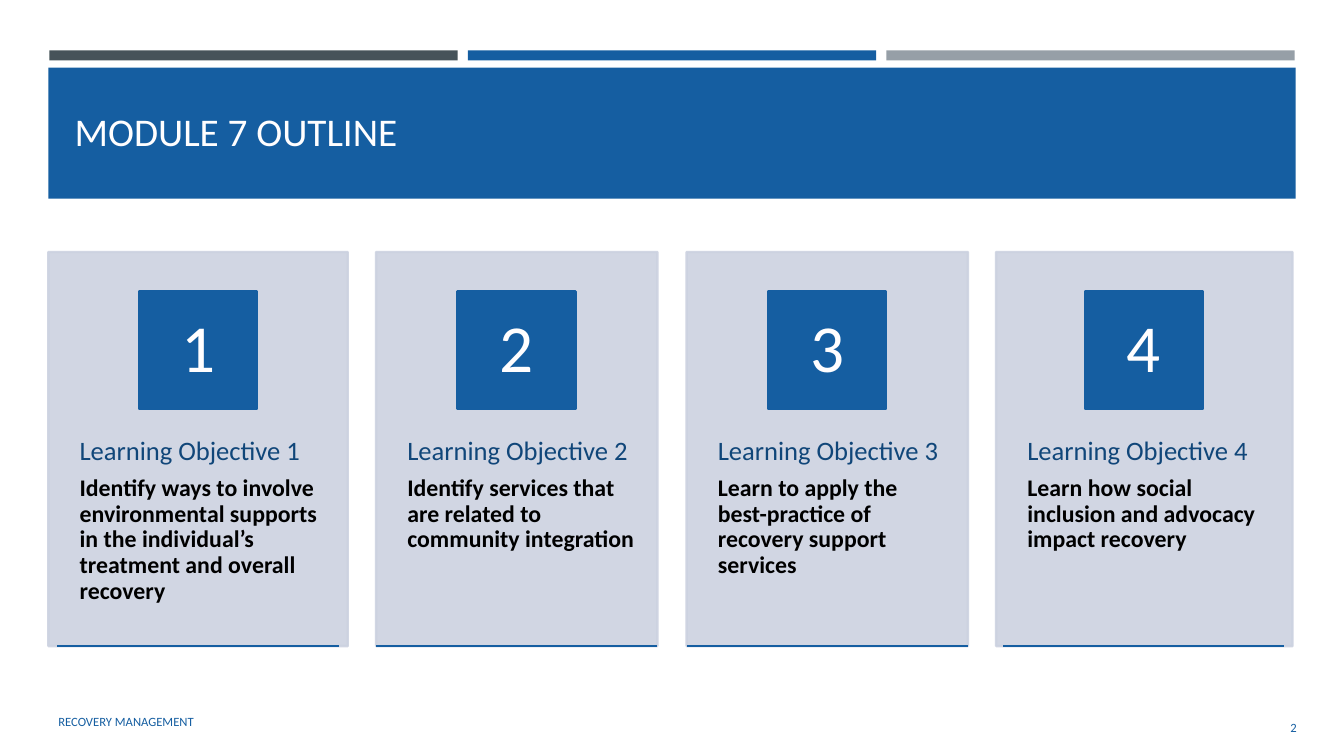
"""Build the Module 7 outline slide with four learning objective cards."""
from dataclasses import dataclass
from typing import Any

import pptx
import pptx.dml.color
import pptx.enum.shapes
import pptx.enum.text
import pptx.oxml
import pptx.oxml.ns
import pptx.util

PX = 9144
FONT = "Calibri"
BLUE, NAVY, SLATE, GREY = "155EA1", "104679", "465359", "969FA7"
PALE, WHITE, BLACK = "CCD2E0", "FFFEFF", "000000"
BAR_LEFT, BAR_PITCH, BAR_WIDTH = 49, 415, 405
CARD_TOP, CARD_HEIGHT, TEXT_TOP, TEXT_HEIGHT = 250, 391, 398, 235
TILE_TOP, TILE_SIZE, RULE_TOP, RULE_WIDTH = 289, 117, 641, 279
LEFT = pptx.enum.text.PP_ALIGN.LEFT
CENTER = pptx.enum.text.PP_ALIGN.CENTER
RIGHT = pptx.enum.text.PP_ALIGN.RIGHT


@dataclass(frozen=True)
class Card:
    number: int
    left: int
    width: int
    objective: str

    def centered(self, width: int) -> int:
        """Return the left edge of an item centred on the card."""
        return self.left + (self.width - width) // 2


CARDS = [
    Card(1, 48, 297, "Identify ways to involve environmental supports in the "
                     "individual’s treatment and overall recovery"),
    Card(2, 373, 279, "Identify services that are related to community integration"),
    Card(3, 681, 279, "Learn to apply the best-practice of recovery support services"),
    Card(4, 988, 294, "Learn how social inclusion and advocacy impact recovery"),
]


def px(*lengths: int) -> list[int]:
    """Turn px lengths into EMU."""
    return [pptx.util.Emu(n * PX) for n in lengths]


def rgb(color: str) -> pptx.dml.color.RGBColor:
    """Turn a hex string into a colour."""
    return pptx.dml.color.RGBColor.from_string(color)


def set_alpha(sp: Any, percent: int) -> None:
    """Give the fill and line of a shape the same opacity."""
    for color in sp._element.spPr.iter(pptx.oxml.ns.qn("a:srgbClr")):
        alpha = pptx.oxml.parse_xml(
            f'<a:alpha {pptx.oxml.ns.nsdecls("a")} val="{percent * 1000}"/>')
        color.append(alpha)


def add_rect(slide: Any, box: tuple[int, int, int, int], color: str,
             outlined: bool = False) -> Any:
    """Draw a flat rectangle, outlined in its own colour on request."""
    sp = slide.shapes.add_shape(pptx.enum.shapes.MSO_SHAPE.RECTANGLE, *px(*box))
    sp.shadow.inherit = False
    sp.fill.solid()
    sp.fill.fore_color.rgb = rgb(color)
    if outlined:
        sp.line.color.rgb = rgb(color)
        sp.line.width = pptx.util.Pt(1.75)
    else:
        sp.line.fill.background()
    return sp


def add_rule(slide: Any, left: int, top: int, width: int) -> None:
    """Draw a horizontal blue line."""
    line = slide.shapes.add_connector(
        pptx.enum.shapes.MSO_CONNECTOR.STRAIGHT, *px(left, top, left + width, top))
    line.line.color.rgb = rgb(BLUE)
    line.line.width = pptx.util.Pt(1.75)
    line._element.spPr.append(pptx.oxml.parse_xml(
        f'<a:effectLst {pptx.oxml.ns.nsdecls("a")}/>'))


def setup_frame(tf: Any, margins: tuple[int, int, int, int],
                middle: bool = True) -> None:
    """Set wrapping, insets and anchor of a text frame."""
    tf.word_wrap = True
    tf.auto_size = pptx.enum.text.MSO_AUTO_SIZE.NONE
    tf.margin_left, tf.margin_top, tf.margin_right, tf.margin_bottom = px(*margins)
    anchor = pptx.enum.text.MSO_ANCHOR
    tf.vertical_anchor = anchor.MIDDLE if middle else anchor.TOP


def write(p: Any, text: str, size: int, color: str, align: Any = LEFT,
          bold: bool = False) -> None:
    """Fill a paragraph with text in one style."""
    p.text = text
    p.alignment = align
    p.line_spacing = 0.9
    p.space_after = pptx.util.Pt(round(size * 0.35))
    p.font.name = FONT
    p.font.size = pptx.util.Pt(size)
    p.font.bold = bold
    p.font.color.rgb = rgb(color)


def add_small_text(slide: Any, box: tuple[int, int, int, int], text: str,
                   align: Any) -> None:
    """Add a line of footer text."""
    tf = slide.shapes.add_textbox(*px(*box)).text_frame
    setup_frame(tf, (10, 5, 10, 5))
    write(tf.paragraphs[0], text, 9, BLUE, align)
    tf.paragraphs[0].space_after = pptx.util.Pt(0)


def add_title(slide: Any, text: str) -> None:
    """Draw the title band and place the title over it."""
    band = add_rect(slide, (48, 67, 1237, 130), BLUE)
    title = slide.shapes.title
    band._element.addnext(title._element)
    title.left, title.top, title.width, title.height = px(64, 77, 1206, 111)
    setup_frame(title.text_frame, (10, 5, 10, 5))
    p = title.text_frame.paragraphs[0]
    write(p, text, 28, WHITE)
    p.space_after = pptx.util.Pt(0)


def add_card(slide: Any, card: Card) -> None:
    """Draw a card with its number tile, objective and bottom rule."""
    panel = add_rect(slide, (card.left, CARD_TOP, card.width, CARD_HEIGHT), PALE, True)
    set_alpha(panel, 90)

    box = px(card.left, TEXT_TOP, card.width, TEXT_HEIGHT)
    tf = slide.shapes.add_textbox(*box).text_frame
    setup_frame(tf, (31, 36, 22, 36), middle=False)
    write(tf.paragraphs[0], f"Learning Objective {card.number}", 19, NAVY)
    write(tf.add_paragraph(), card.objective, 17, BLACK, bold=True)

    tile_box = (card.centered(TILE_SIZE), TILE_TOP, TILE_SIZE, TILE_SIZE)
    tile = add_rect(slide, tile_box, BLUE, True)
    setup_frame(tile.text_frame, (9, 1, 9, 1))
    write(tile.text_frame.paragraphs[0], str(card.number), 48, WHITE, CENTER)

    add_rule(slide, card.centered(RULE_WIDTH), RULE_TOP, RULE_WIDTH)


def main() -> None:
    """Build and save the slide."""
    prs = pptx.Presentation()
    prs.slide_width, prs.slide_height = px(1333, 750)
    slide = prs.slides.add_slide(prs.slide_layouts.get_by_name("Title Only"))
    for i, color in enumerate((SLATE, BLUE, GREY)):
        add_rect(slide, (BAR_LEFT + i * BAR_PITCH, 50, BAR_WIDTH, 10), color)
    add_title(slide, "MODULE 7 OUTLINE")
    for card in CARDS:
        add_card(slide, card)
    add_small_text(slide, (48, 697, 746, 40), "RECOVERY MANAGEMENT", LEFT)
    add_small_text(slide, (1181, 703, 115, 40), "2", RIGHT)
    prs.save("out.pptx")


if __name__ == "__main__":
    main()
